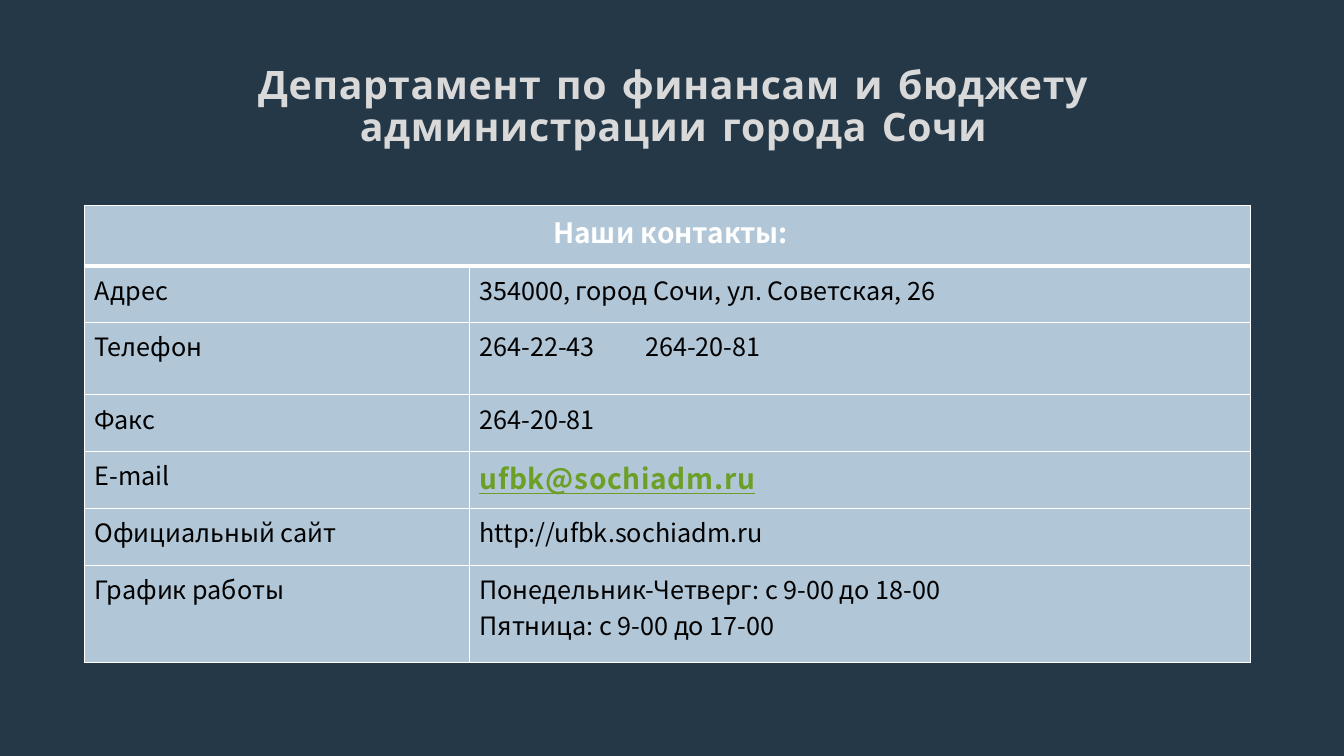
from pptx import Presentation
from pptx import util as u
from pptx.dml.color import RGBColor
from pptx.enum import text
from pptx.oxml import parse_xml
from pptx.oxml.ns import nsdecls

NAVY = RGBColor(0x25, 0x38, 0x48)
PALE_BLUE = RGBColor(0xB1, 0xC6, 0xD7)
LIGHT_GREY = RGBColor(0xD9, 0xD9, 0xD9)
GREEN = RGBColor(0x6B, 0x9F, 0x25)
WHITE = RGBColor(0xFF, 0xFF, 0xFF)
BLACK = RGBColor(0, 0, 0)
TITLE_FONT = "Comic Neue"
TABLE_FONT = "Noto Sans CJK SC"


def style_text(paragraph, font_name, size, color, bold=False, spacing=0):
    for run in paragraph.runs:
        run.font.name = font_name
        run.font.size = u.Pt(size)
        run.font.color.rgb = color
        run.font.bold = bold
        run.font._element.set("spc", str(spacing))


def style_cell(cell, top, bottom):
    cell_props = cell._tc.get_or_add_tcPr()
    for side, points in (("L", 1), ("R", 1), ("T", top), ("B", bottom)):
        cell_props.append(parse_xml(
            f'<a:ln{side} {nsdecls("a")} w="{u.Pt(points)}"><a:solidFill>'
            f'<a:srgbClr val="{WHITE}"/></a:solidFill></a:ln{side}>'))
    cell.fill.solid()
    cell.fill.fore_color.rgb = PALE_BLUE


prs = Presentation()
prs.slide_width, prs.slide_height = u.Cm(33.87), u.Cm(19.05)
slide = prs.slides.add_slide(prs.slide_layouts[5])
slide.background.fill.solid()
slide.background.fill.fore_color.rgb = NAVY

# Title
title = slide.shapes.title
title.left, title.top = u.Cm(4.29), u.Cm(1.4)
title.width, title.height = u.Cm(25.37), u.Cm(2.64)
title.text_frame.text = "Департамент по финансам и бюджету администрации города Сочи"
title.text_frame.word_wrap = True
title.text_frame.vertical_anchor = text.MSO_ANCHOR.MIDDLE
heading = title.text_frame.paragraphs[0]
heading.alignment = text.PP_ALIGN.CENTER
heading.line_spacing = 0.9
style_text(heading, TITLE_FONT, 28, LIGHT_GREY, True, 50)

# Contacts table: label, value, row height in cm
contacts = [
    (" Наши контакты:", "", 1.52),
    ("Адрес", "354000, город Сочи, ул. Советская, 26", 1.43),
    ("Телефон", "264-22-43\t264-20-81", 1.82),
    ("Факс", "264-20-81", 1.43),
    ("Е-mail", "ufbk@sochiadm.ru", 1.43),
    ("Официальный сайт", "http://ufbk.sochiadm.ru", 1.43),
    ("График работы",
     "Понедельник-Четверг: с 9-00 до 18-00\nПятница: с 9-00 до 17-00", 2.46),
]
table = slide.shapes.add_table(
    len(contacts), 2, u.Cm(2.13), u.Cm(5.18), u.Cm(29.38),
    u.Cm(sum(height for _, _, height in contacts))).table
table.horz_banding = False
table.columns[0].width, table.columns[1].width = u.Cm(9.7), u.Cm(19.68)

for row, (label, value, height) in enumerate(contacts):
    table.rows[row].height = u.Cm(height)
    for column, content in enumerate((label, value)):
        cell = table.cell(row, column)
        style_cell(cell, 3 if row == 1 else 1, 3 if row == 0 else 1)
        cell.text_frame.text = content
        for paragraph in cell.text_frame.paragraphs:
            style_text(paragraph, TABLE_FONT, 18, BLACK)

# Header across both columns
header = table.cell(0, 0)
header.merge(table.cell(0, 1))
header_line = header.text_frame.paragraphs[0]
header_line.alignment = text.PP_ALIGN.CENTER
style_text(header_line, TABLE_FONT, 20, WHITE, True)

# Tab stop between the two phone numbers
phones = table.cell(2, 1).text_frame.paragraphs[0]
phones._p.get_or_add_pPr().append(parse_xml(
    f'<a:tabLst {nsdecls("a")}><a:tab pos="{u.Cm(4.18)}" algn="l"/></a:tabLst>'))

# E-mail address
email = table.cell(4, 1).text_frame.paragraphs[0]
style_text(email, TABLE_FONT, 20, GREEN, True, 50)
email.runs[0].font.underline = True

prs.save("out.pptx")
